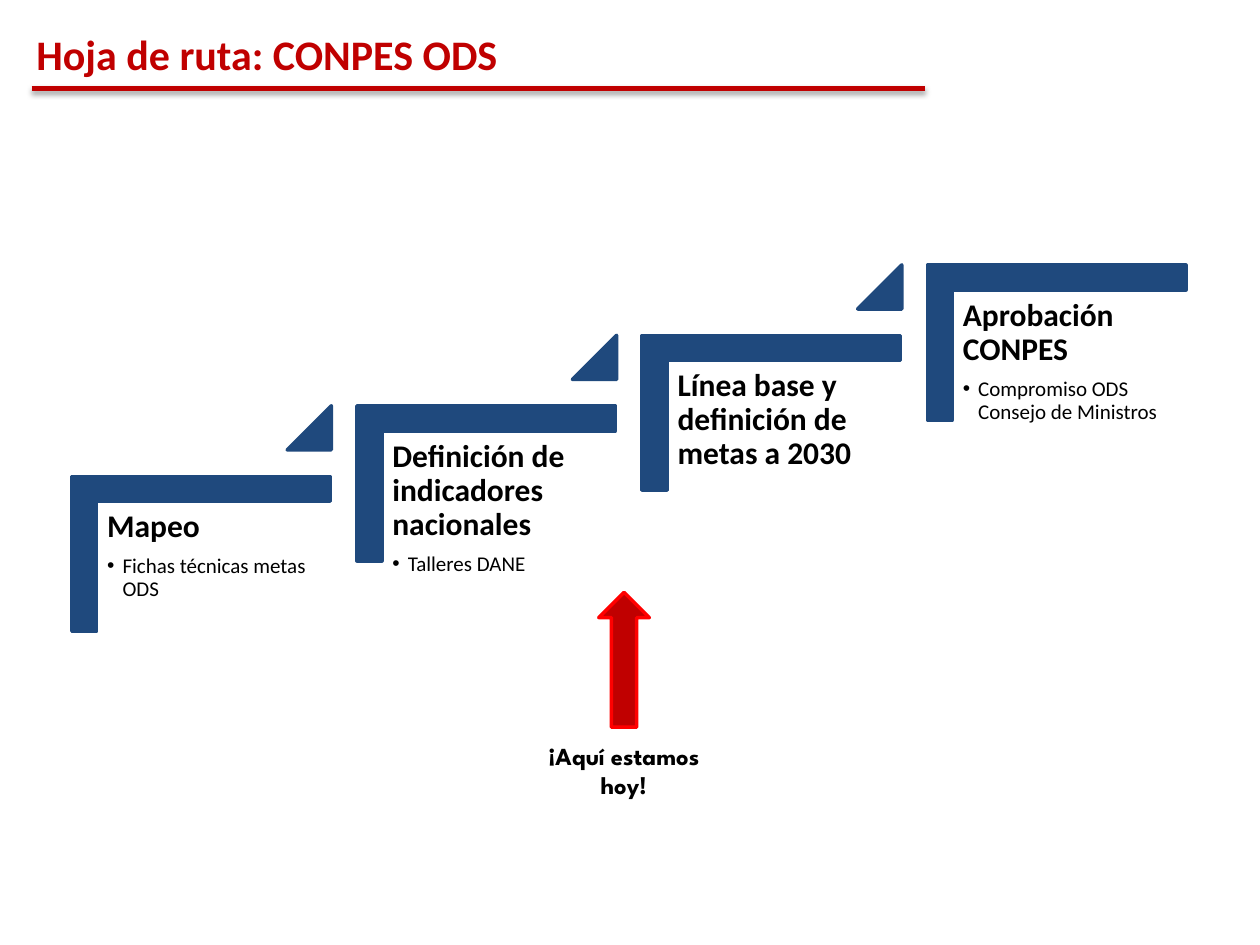
from dataclasses import dataclass

from lxml import etree
from pptx import Presentation
from pptx.dml.color import RGBColor
from pptx.enum.shapes import MSO_CONNECTOR, MSO_SHAPE
from pptx.enum.text import MSO_ANCHOR, MSO_AUTO_SIZE, PP_ALIGN
from pptx.oxml.ns import qn
from pptx.util import Cm, Pt

CORNER = MSO_SHAPE.CORNER
TRIANGLE = MSO_SHAPE.ISOSCELES_TRIANGLE
ARROW = MSO_SHAPE.DOWN_ARROW
STRAIGHT = MSO_CONNECTOR.STRAIGHT
TOP, MIDDLE = MSO_ANCHOR.TOP, MSO_ANCHOR.MIDDLE
LEFT, CENTER = PP_ALIGN.LEFT, PP_ALIGN.CENTER
FIXED_SIZE = MSO_AUTO_SIZE.NONE


@dataclass(frozen=True)
class Theme:
    navy: RGBColor = RGBColor(0x1F, 0x49, 0x7D)
    red: RGBColor = RGBColor(0xC0, 0x00, 0x00)
    bright_red: RGBColor = RGBColor(0xFF, 0x00, 0x00)
    black: RGBColor = RGBColor(0x00, 0x00, 0x00)
    font: str = "Calibri"
    callout_font: str = "League Spartan"
    title: int = 24
    heading: int = 18
    callout: int = 14
    detail: int = 12


THEME = Theme()
STEP_RIGHT, STEP_UP = 5.75, 1.42
STEPS = [
    ("Mapeo", "Fichas técnicas metas ODS", 4.7),
    ("Definición de indicadores nacionales", "Talleres DANE", 5.28),
    ("Línea base y definición de metas a 2030", None, 4.7),
    ("Aprobación CONPES", "Compromiso ODS Consejo de Ministros", 4.7),
]


def place(shape, left, top, width, height):
    shape.left, shape.top = Cm(left), Cm(top)
    shape.width, shape.height = Cm(width), Cm(height)


def prepare_frame(shape, anchor=TOP, margin=None):
    frame = shape.text_frame
    frame.word_wrap = True
    frame.auto_size = FIXED_SIZE
    frame.vertical_anchor = anchor
    if margin is not None:
        frame.margin_left = frame.margin_right = Cm(margin)
        frame.margin_top = frame.margin_bottom = Cm(margin)
    return frame


def set_bullet(paragraph, bullet):
    properties = paragraph._p.get_or_add_pPr()
    indent = Cm(0.31) if bullet else 0
    properties.set("marL", str(indent))
    properties.set("indent", str(-indent))
    if bullet:
        etree.SubElement(properties, qn("a:buChar"), char="•")
    else:
        etree.SubElement(properties, qn("a:buNone"))


def write_text(frame, text, size, color=THEME.black, font=THEME.font, bold=True,
               align=LEFT, line_spacing=1.0, space_after=0, bullet=False):
    paragraph = frame.paragraphs[0]
    if paragraph.runs:
        paragraph = frame.add_paragraph()
    set_bullet(paragraph, bullet)
    paragraph.alignment = align
    paragraph.line_spacing = line_spacing
    paragraph.space_before = Pt(0)
    paragraph.space_after = Pt(space_after)
    run = paragraph.add_run()
    run.text = text
    run.font.name = font
    run.font.size = Pt(size)
    run.font.bold = bold
    run.font.color.rgb = color


def add_block(slide, kind, box, fill, line, rotation=0, adjustments=()):
    shape = slide.shapes.add_shape(kind, *map(Cm, box))
    shape.shadow.inherit = False
    shape.rotation = rotation
    for index, value in enumerate(adjustments):
        shape.adjustments[index] = value
    shape.fill.solid()
    shape.fill.fore_color.rgb = fill
    shape.line.color.rgb = line
    shape.line.width = Pt(2)


def add_title(slide, text):
    title = slide.shapes.title
    place(title, 0.48, 0.51, 17.55, 1.14)
    write_text(prepare_frame(title, MIDDLE), text, THEME.title, color=THEME.red)


def add_title_rule(slide):
    rule = slide.shapes.add_connector(STRAIGHT, Cm(0.64), Cm(1.78), Cm(18.64), Cm(1.78))
    rule.line.color.rgb = THEME.red
    rule.line.width = Pt(3)
    effects = etree.SubElement(rule._element.spPr, qn("a:effectLst"))
    shadow = etree.SubElement(effects, qn("a:outerShdw"), blurRad=str(Pt(3.1)),
                              dist=str(Pt(1.8)), dir="5400000", rotWithShape="0")
    color = etree.SubElement(shadow, qn("a:srgbClr"), val=str(THEME.black))
    etree.SubElement(color, qn("a:alpha"), val="35000")


def add_step(slide, index, body, heading, detail, width):
    right, up = index * STEP_RIGHT, index * STEP_UP
    add_block(slide, CORNER, (2.49 + right, 8.56 - up, 3.12, 5.21), THEME.navy,
              THEME.navy, rotation=90, adjustments=(0.161, 0.161))
    if index < len(STEPS) - 1:
        add_block(slide, TRIANGLE, (5.79 + right, 8.18 - up, 0.89, 0.89), THEME.navy,
                  THEME.navy, adjustments=(1,))
    place(body, 1.98 + right, 10.11 - up, width, 4.11)
    frame = prepare_frame(body, margin=0.18)
    write_text(frame, heading, THEME.heading, line_spacing=0.9, space_after=6.3)
    if detail:
        write_text(frame, detail, THEME.detail, bold=False, line_spacing=0.9,
                   space_after=1.8, bullet=True)


def add_callout(slide, text):
    add_block(slide, ARROW, (12.07, 11.94, 1.02, 2.72), THEME.red, THEME.bright_red,
              rotation=180)
    label = slide.shapes.add_textbox(Cm(10.39), Cm(14.81), Cm(4.37), Cm(1.17))
    write_text(prepare_frame(label), text, THEME.callout, font=THEME.callout_font,
               align=CENTER, space_after=6)


def main():
    presentation = Presentation()
    presentation.slide_width, presentation.slide_height = Cm(25.4), Cm(19.05)
    comparison_layout = presentation.slide_layouts[4]
    slide = presentation.slides.add_slide(comparison_layout)
    add_title(slide, "Hoja de ruta: CONPES ODS")
    add_title_rule(slide)
    bodies = list(slide.placeholders)[1:]
    for index, (body, step) in enumerate(zip(bodies, STEPS)):
        add_step(slide, index, body, *step)
    add_callout(slide, "¡Aquí estamos hoy!")
    presentation.save("out.pptx")


if __name__ == "__main__":
    main()
